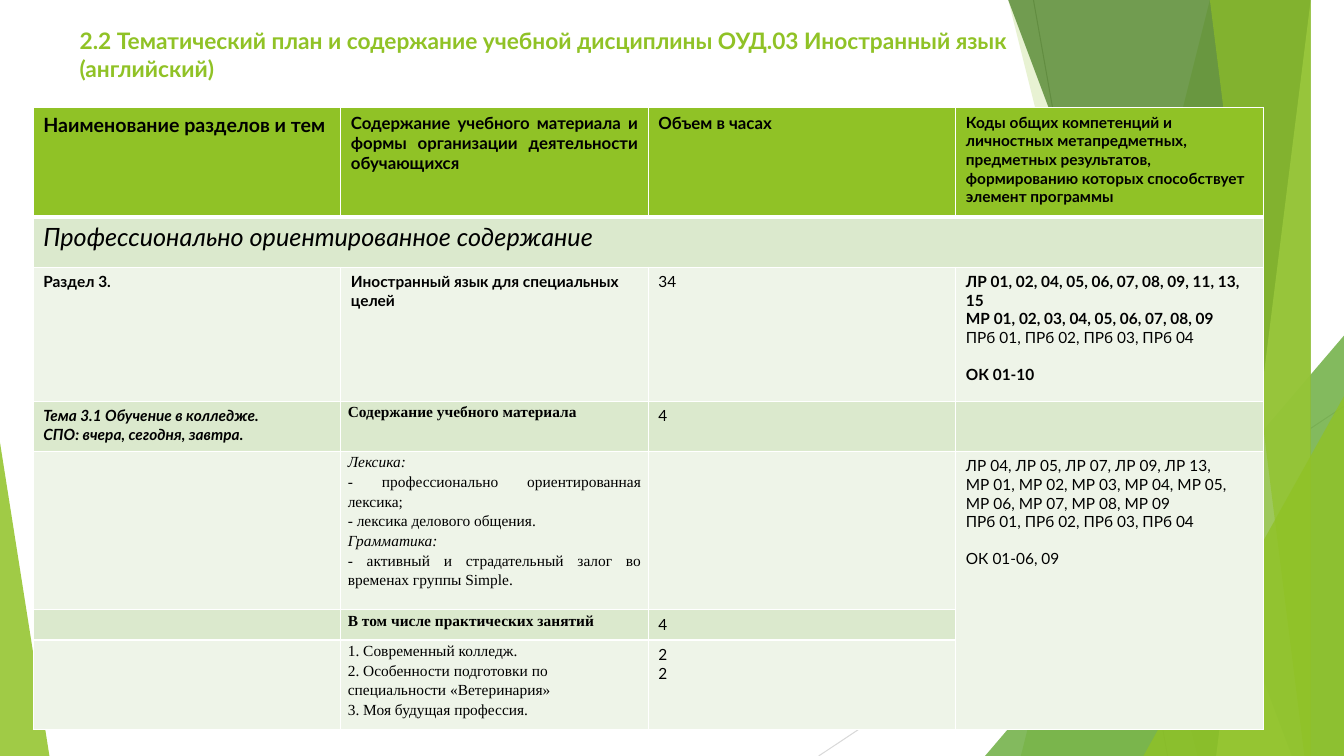
from lxml import etree
from pptx import Presentation
from pptx import util as u
from pptx.dml.color import RGBColor
from pptx.enum import shapes, text
from pptx.oxml.ns import qn

TITLE = ("2.2 Тематический план и содержание учебной дисциплины "
         "ОУД.03 Иностранный язык (английский)")
SLIDE_WIDTH, SLIDE_HEIGHT = 13.33, 7.5
GREEN, BAND, PALE, WHITE = "90C226", "DBE9CD", "EEF4E8", "FFFFFF"

# Background: lines (start, end, colour)
THIN_LINES = [
    ((10.25, 0), (11.58, 7.5), "BFBFBF"),
    ((13.33, 4.03), (8.12, 7.5), "D9D9D9"),
]
# Facets: bands reaching the right edge (top x, bottom x) and
# triangles (left, top, width, height, apex), with colour and opacity in %
FACETS = [
    ("band", (12.28, 10.04), GREEN, 30),
    ("band", (10.5, 11.83), GREEN, 20),
    ("triangle", (9.77, 3.33, 3.56, 4.17, 1), "54A021", 72),
    ("band", (10.21, 12.91), "3F7819", 70),
    ("band", (13.03, 11.92), "C0E474", 70),
    ("band", (11.96, 13.18), GREEN, 65),
    ("triangle", (11.34, 3.93, 1.99, 3.57, 1), GREEN, 80),
    ("triangle", (0, 4.39, 0.49, 3.11, 0), GREEN, 85),
]

# Table: each paragraph is (text, marks, size); marks are
# b bold, i italic, j justified, s serif, g gap above
COLUMN_WIDTH = 3.05
ROWS = [
    (1.08, GREEN, [
        [("Наименование разделов и тем", "b", 14)],
        [("Содержание учебного материала и формы организации "
          "деятельности обучающихся", "bj", 12)],
        [("Объем в часах", "bj", 12)],
        [("Коды общих компетенций и личностных метапредметных, предметных "
          "результатов, формированию которых способствует элемент программы",
          "b", 11)]]),
    (0.5, BAND, [
        [("Профессионально ориентированное содержание", "i", 18)],
        [], [], []]),
    (1.33, PALE, [
        [("Раздел 3.", "b", 11)],
        [("Иностранный язык для специальных целей", "b", 11)],
        [("34", "", 11)],
        [("ЛР 01, 02, 04, 05, 06, 07, 08, 09, 11, 13, 15", "b", 11),
         ("МР 01, 02, 03, 04, 05, 06, 07, 08, 09", "b", 11),
         ("ПРб 01, ПРб 02, ПРб 03, ПРб 04", "", 11),
         ("ОК 01-10", "bg", 11)]]),
    (0.5, BAND, [
        [("Тема 3.1 Обучение в колледже.", "bi", 11),
         ("СПО: вчера, сегодня, завтра.", "bi", 11)],
        [("Содержание учебного материала", "bjs", 11)],
        [("4", "", 11)],
        []]),
    (1.57, PALE, [
        [],
        [("Лексика:", "ijs", 11),
         ("- профессионально ориентированная лексика;", "js", 11),
         ("- лексика делового общения.", "js", 11),
         ("Грамматика:", "ijs", 11),
         ("- активный и страдательный залог во временах группы Simple.",
          "js", 11)],
        [],
        [("ЛР 04, ЛР 05, ЛР 07, ЛР 09, ЛР 13,", "", 11),
         ("МР 01, МР 02, МР 03, МР 04, МР 05, МР 06, МР 07, МР 08, МР 09",
          "", 11),
         ("ПРб 01, ПРб 02, ПРб 03, ПРб 04", "", 11),
         ("ОК 01-06, 09", "g", 11)]]),
    (0.3, BAND, [
        [],
        [("В том числе практических занятий", "bs", 11)],
        [("4", "", 11)],
        []]),
    (0.89, PALE, [
        [],
        [("1. Современный колледж.", "s", 11),
         ("2. Особенности подготовки по специальности «Ветеринария»", "s", 11),
         ("3. Моя будущая профессия.", "s", 11)],
        [("2", "", 11), ("2", "", 11)],
        []]),
]
MERGES = [((1, 0), (1, 3)), ((4, 3), (6, 3))]


def color(value):
    return RGBColor.from_string(value)


def set_font(paragraph, name, size, value, bold=False, italic=False):
    font = paragraph.font
    font.name, font.size = name, u.Pt(size)
    font.bold, font.italic = bold, italic
    font.color.rgb = color(value)


def add_line(slide, start, end, value):
    points = [u.Inches(n) for n in start + end]
    line = slide.shapes.add_connector(shapes.MSO_CONNECTOR.STRAIGHT, *points)
    line.line.color.rgb = color(value)
    line.line.width = u.Pt(0.75)
    etree.SubElement(line._element.spPr, qn("a:effectLst"))


def add_facet(slide, kind, geometry, value, opacity):
    if kind == "band":
        top_x, bottom_x = geometry
        corners = [(SLIDE_WIDTH, -0.01), (SLIDE_WIDTH, SLIDE_HEIGHT),
                   (bottom_x, SLIDE_HEIGHT)]
        builder = slide.shapes.build_freeform(top_x, -0.01, u.Inches(1))
        builder.add_line_segments(corners, close=True)
        shape = builder.convert_to_shape()
    else:
        *box, apex = geometry
        shape = slide.shapes.add_shape(
            shapes.MSO_SHAPE.ISOSCELES_TRIANGLE, *[u.Inches(n) for n in box])
        shape.adjustments[0] = apex
    shape.shadow.inherit = False
    shape.line.fill.background()
    shape.fill.solid()
    shape.fill.fore_color.rgb = color(value)
    tint = shape._element.spPr.find(qn("a:solidFill"))[0]
    etree.SubElement(tint, qn("a:alpha"), val=str(opacity * 1000))


def add_borders(cell, bottom_width):
    properties = cell._tc.get_or_add_tcPr()
    sides = [("L", 1), ("R", 1), ("T", 1), ("B", bottom_width)]
    for position, (side, width) in enumerate(sides):
        border = etree.Element(qn("a:ln" + side), w=str(u.Pt(width)))
        fill = etree.SubElement(border, qn("a:solidFill"))
        etree.SubElement(fill, qn("a:srgbClr"), val=WHITE)
        properties.insert(position, border)


def fill_cell(cell, paragraphs, background, bottom_width):
    cell.fill.solid()
    cell.fill.fore_color.rgb = color(background)
    add_borders(cell, bottom_width)
    frame = cell.text_frame
    if not paragraphs:
        # Keeps empty cells from stretching low rows
        etree.SubElement(frame.paragraphs[0]._p, qn("a:endParaRPr"), sz="1100")
    for index, (words, marks, size) in enumerate(paragraphs):
        paragraph = frame.add_paragraph() if index else frame.paragraphs[0]
        paragraph.text = words
        serif = "s" in marks
        set_font(paragraph, "Times New Roman" if serif else "Lato", size,
                 "000000", "b" in marks, "i" in marks)
        if "j" in marks:
            paragraph.alignment = text.PP_ALIGN.JUSTIFY
        if "g" in marks:
            paragraph.space_before = u.Pt(13.2)
        if serif:
            paragraph.line_spacing = 1.15
            cell.margin_left = cell.margin_right = u.Inches(0.07)
            cell.margin_top = cell.margin_bottom = 0


def add_plan(slide):
    columns = len(ROWS[0][2])
    height = sum(row[0] for row in ROWS)
    table = slide.shapes.add_table(
        len(ROWS), columns, u.Inches(0.33), u.Inches(1.07),
        u.Inches(COLUMN_WIDTH * columns), u.Inches(height)).table
    table.first_row = table.horz_banding = False
    for column in table.columns:
        column.width = u.Inches(COLUMN_WIDTH)
    for r, (row_height, background, cells) in enumerate(ROWS):
        table.rows[r].height = u.Inches(row_height)
        for c, paragraphs in enumerate(cells):
            # The row 4 colour carries on through the merged last column
            shade = PALE if c == 3 and r >= 4 else background
            fill_cell(table.cell(r, c), paragraphs, shade, 1 if r else 3)
    for first, last in MERGES:
        table.cell(*first).merge(table.cell(*last))


def main():
    presentation = Presentation()
    presentation.slide_width = u.Inches(SLIDE_WIDTH)
    presentation.slide_height = u.Inches(SLIDE_HEIGHT)
    slide = presentation.slides.add_slide(presentation.slide_layouts[5])

    for line in THIN_LINES:
        add_line(slide, *line)
    for facet in FACETS:
        add_facet(slide, *facet)

    # Title
    title = slide.shapes.title
    title.left, title.top = u.Inches(0.69), u.Inches(0.22)
    title.width, title.height = u.Inches(9.4), u.Inches(0.83)
    frame = title.text_frame
    frame.text = TITLE
    frame.word_wrap = True
    frame.auto_size = text.MSO_AUTO_SIZE.NONE
    frame.vertical_anchor = text.MSO_ANCHOR.TOP
    frame.paragraphs[0].alignment = text.PP_ALIGN.LEFT
    set_font(frame.paragraphs[0], "Lato", 16.2, GREEN, bold=True)

    add_plan(slide)
    presentation.save("out.pptx")


if __name__ == "__main__":
    main()
